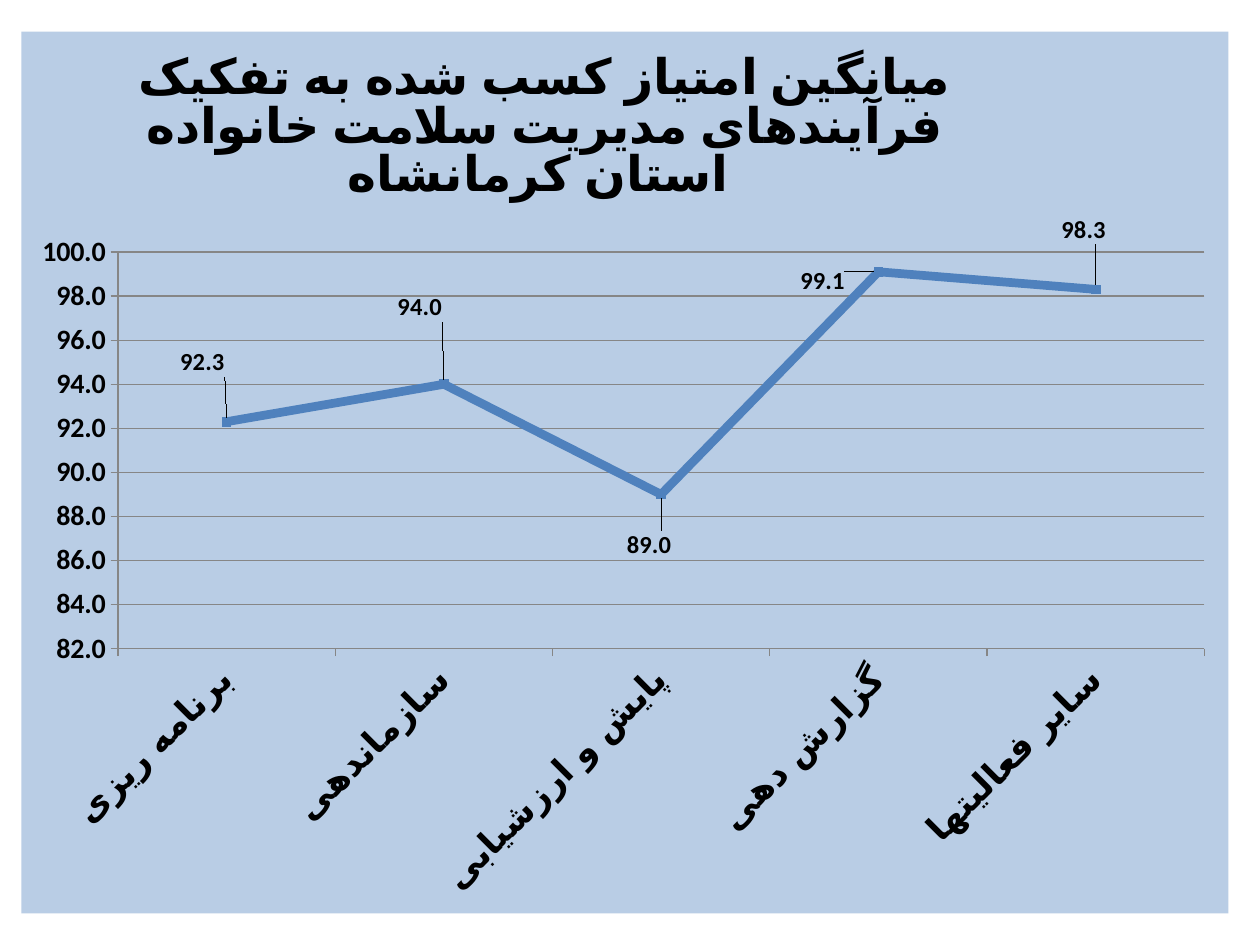
from dataclasses import dataclass

from lxml import etree
from pptx import Presentation
from pptx.chart.data import CategoryChartData
from pptx.dml.color import RGBColor
from pptx.enum.chart import XL_CHART_TYPE, XL_LABEL_POSITION, XL_MARKER_STYLE, XL_TICK_MARK
from pptx.oxml import parse_xml
from pptx.oxml.ns import nsdecls, qn
from pptx.util import Inches, Pt

LINE_MARKERS = XL_CHART_TYPE.LINE_MARKERS
SQUARE = XL_MARKER_STYLE.SQUARE
OUTSIDE = XL_TICK_MARK.OUTSIDE
NO_TICK = XL_TICK_MARK.NONE
ABOVE, BELOW, LEFT = XL_LABEL_POSITION.ABOVE, XL_LABEL_POSITION.BELOW, XL_LABEL_POSITION.LEFT


@dataclass(frozen=True)
class Theme:
    """Colours, type and line sizes of the slide."""
    font: str = "Calibri"
    text: str = "000000"
    panel: str = "B9CDE5"
    series: str = "4F81BD"
    grid: str = "868686"
    title_size: int = 28
    category_size: int = 20
    value_size: int = 16
    label_size: int = 14
    series_width: int = 5
    number_format: str = "0.0;[Red]0.0"


THEME = Theme()
TITLE = "میانگین امتیاز کسب شده به تفکیک فرآیندهای مدیریت سلامت خانواده استان کرمانشاه "
SCORES = {
    "برنامه ریزی": 92.3,
    "سازماندهی": 94,
    "پایش و ارزشیابی": 89,
    "گزارش دهی": 99.1,
    "سایر فعالیتها": 98.3,
}
LABEL_PLACES = [
    (ABOVE, -0.02, -0.04),
    (ABOVE, -0.02, -0.06),
    (BELOW, -0.01, 0.03),
    (LEFT, -0.02, 0.01),
    (ABOVE, -0.01, -0.04),
]


def style_font(font, size):
    """Apply the bold theme font at the given size."""
    font.name = THEME.font
    font.size = Pt(size)
    font.bold = True
    font.color.rgb = RGBColor.from_string(THEME.text)


def manual_layout(**settings):
    """Return a chart layout element with the given settings in order."""
    layout = parse_xml(f"<c:layout {nsdecls('c')}><c:manualLayout/></c:layout>")
    for name, value in settings.items():
        etree.SubElement(layout[0], qn(f"c:{name}")).set("val", str(value))
    return layout


def place_element(element, layout, index):
    """Replace the element's layout by a new one at the index."""
    for former in element.findall(qn("c:layout")):
        element.remove(former)
    element.insert(index, layout)


def add_score_chart(slide, width, height):
    """Add the line chart on its filled panel."""
    data = CategoryChartData(number_format=THEME.number_format)
    data.categories = list(SCORES)
    data.add_series("Series 1", list(SCORES.values()))
    frame = slide.shapes.add_chart(
        LINE_MARKERS, round(width * 0.017), round(height / 30),
        round(width * 0.958), round(height * 14 / 15), data)
    chart = frame.chart
    chart.has_legend = False
    chart.font.name = THEME.font
    chart.font.size = Pt(10)
    panel = parse_xml(
        f'<c:spPr {nsdecls("c", "a")}><a:solidFill><a:srgbClr val="{THEME.panel}"/>'
        "</a:solidFill><a:ln><a:noFill/></a:ln></c:spPr>")
    chart.element.find(qn("c:chart")).addnext(panel)
    plot_area = chart.element.find(f".//{qn('c:plotArea')}")
    place_element(plot_area, manual_layout(
        layoutTarget="inner", xMode="edge", yMode="edge", x=0.08, y=0.25, w=0.9, h=0.45), 0)
    return chart


def style_title(chart):
    """Write the right-to-left title at the top of the panel."""
    chart.has_title = True
    title = chart.chart_title
    title.include_in_layout = False
    title.text_frame.text = TITLE
    paragraph = title.text_frame.paragraphs[0]
    paragraph.font.size = Pt(THEME.title_size)
    paragraph._p.get_or_add_pPr().set("rtl", "1")
    style_font(paragraph.runs[0].font, THEME.title_size)
    place_element(title._element, manual_layout(xMode="edge", yMode="edge", x=0.09, y=0.01), 1)


def style_axis(axis, size):
    """Format the labels, line and ticks of an axis."""
    style_font(axis.tick_labels.font, size)
    axis.major_tick_mark = OUTSIDE
    axis.minor_tick_mark = NO_TICK
    axis.format.line.color.rgb = RGBColor.from_string(THEME.grid)


def style_axes(chart):
    """Set the value scale, grid lines and slanted categories."""
    values, categories = chart.value_axis, chart.category_axis
    style_axis(values, THEME.value_size)
    style_axis(categories, THEME.category_size)
    values.minimum_scale, values.maximum_scale, values.major_unit = 82, 100, 2
    values.tick_labels.number_format = THEME.number_format
    values.tick_labels.number_format_is_linked = False
    values.has_major_gridlines = True
    values.major_gridlines.format.line.color.rgb = RGBColor.from_string(THEME.grid)
    body = categories._element.find(f"{qn('c:txPr')}/{qn('a:bodyPr')}")
    body.set("rot", str(-45 * 60000))


def style_series(series):
    """Format the score line and its markers."""
    color = RGBColor.from_string(THEME.series)
    series.smooth = False
    series.format.line.color.rgb = color
    series.format.line.width = Pt(THEME.series_width)
    series.marker.style = SQUARE
    series.marker.size = 5
    series.marker.format.fill.solid()
    series.marker.format.fill.fore_color.rgb = color
    series.marker.format.line.color.rgb = color


def label_points(series):
    """Show each value at its shifted place near the line."""
    for index, (position, x, y) in enumerate(LABEL_PLACES):
        label = series.points[index].data_label
        style_font(label.font, THEME.label_size)
        label.position = position
        element = label._dLbl
        place_element(element, manual_layout(x=x, y=y), 1)
        element.insert(2, parse_xml(
            f'<c:numFmt {nsdecls("c")} formatCode="{THEME.number_format}" sourceLinked="0"/>'))


def main():
    """Build and save the slide."""
    presentation = Presentation()
    presentation.slide_width, presentation.slide_height = Inches(10), Inches(7.5)
    slide = presentation.slides.add_slide(presentation.slide_layouts[6])
    chart = add_score_chart(slide, presentation.slide_width, presentation.slide_height)
    style_title(chart)
    style_axes(chart)
    series = chart.plots[0].series[0]
    style_series(series)
    label_points(series)
    presentation.save("out.pptx")


if __name__ == "__main__":
    main()
